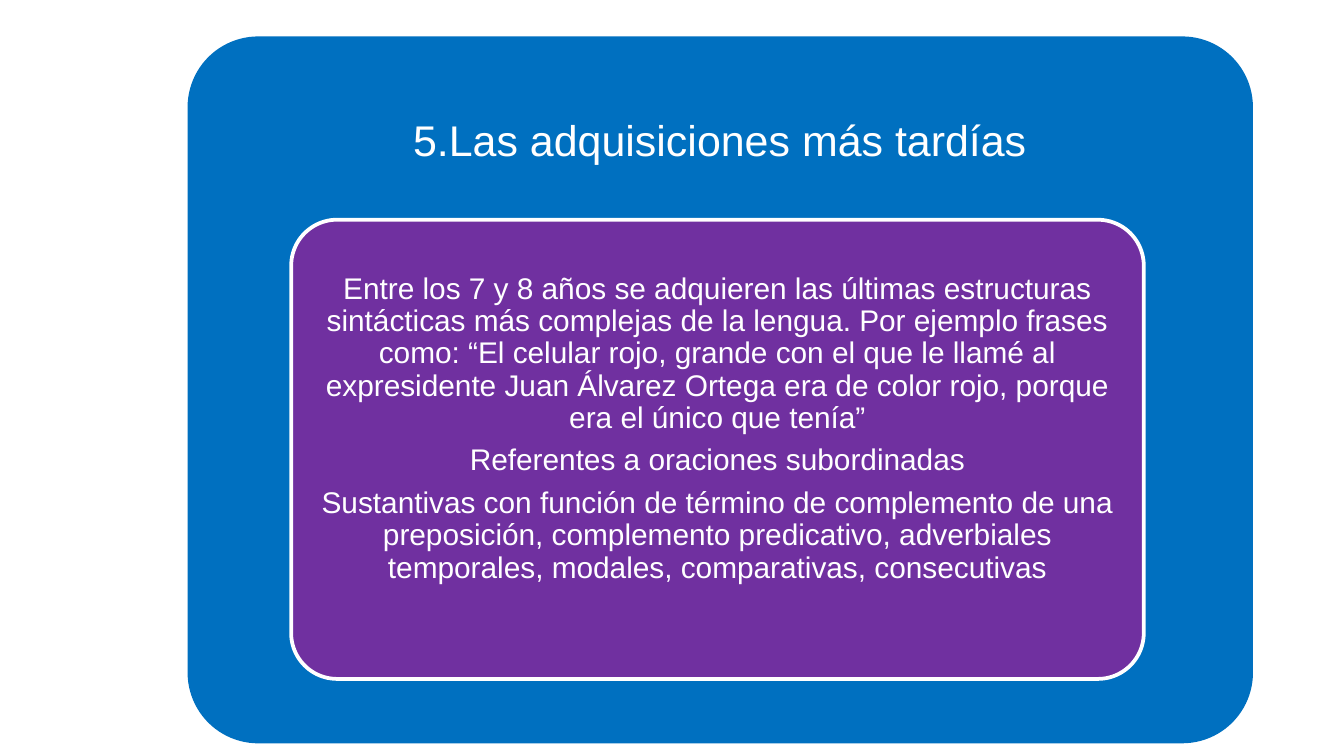
from pptx import Presentation
from pptx.dml.color import RGBColor
from pptx.enum.shapes import MSO_SHAPE
from pptx.enum.text import MSO_ANCHOR, PP_ALIGN
from pptx.util import Pt

PX = 9525
ROUNDED = MSO_SHAPE.ROUNDED_RECTANGLE
MIDDLE = MSO_ANCHOR.MIDDLE
CENTER = PP_ALIGN.CENTER
WHITE = "FFFFFF"


def color(value):
    return RGBColor.from_string(value)


prs = Presentation()
prs.slide_width = 960 * PX
prs.slide_height = 540 * PX
s = prs.slides.add_slide(prs.slide_layouts[6])

panels = [
    ((134, 26, 761, 505), "0070C0", None),
    ((208, 157, 609, 328), "7030A0", WHITE),
]
for box, fill, line in panels:
    sp = s.shapes.add_shape(ROUNDED, *[v * PX for v in box])
    sp.adjustments[0] = 0.1
    sp.shadow.inherit = False
    sp.fill.solid()
    sp.fill.fore_color.rgb = color(fill)
    if line:
        sp.line.color.rgb = color(line)
        sp.line.width = Pt(2)
    else:
        sp.line.fill.background()

texts = [
    ((134, 26, 761, 152), (10, 10, 10, 10), 23, [
        "5.Las adquisiciones más tardías",
    ]),
    ((218, 167, 589, 309), (4, 3, 4, 33), 16, [
        "Entre los 7 y 8 años se adquieren las últimas estructuras sintácticas más "
        "complejas de la lengua. Por ejemplo frases como: “El celular rojo, grande con "
        "el que le llamé al expresidente Juan Álvarez Ortega era de color rojo, porque "
        "era el único que tenía”",
        "Referentes a oraciones subordinadas",
        "Sustantivas con función de término de complemento de una preposición, "
        "complemento predicativo, adverbiales temporales, modales, comparativas, "
        "consecutivas",
    ]),
]
for box, insets, size, paragraphs in texts:
    tf = s.shapes.add_textbox(*[v * PX for v in box]).text_frame
    tf.word_wrap = True
    tf.vertical_anchor = MIDDLE
    tf.margin_left, tf.margin_top, tf.margin_right, tf.margin_bottom = [
        v * PX for v in insets
    ]
    for i, text in enumerate(paragraphs):
        p = tf.add_paragraph() if i else tf.paragraphs[0]
        p.alignment = CENTER
        p.line_spacing = 0.9
        if i:
            p.space_before = Pt(5.6)
        r = p.add_run()
        r.text = text
        r.font.name = "Arial"
        r.font.size = Pt(size)
        r.font.color.rgb = color(WHITE)

prs.save("out.pptx")
